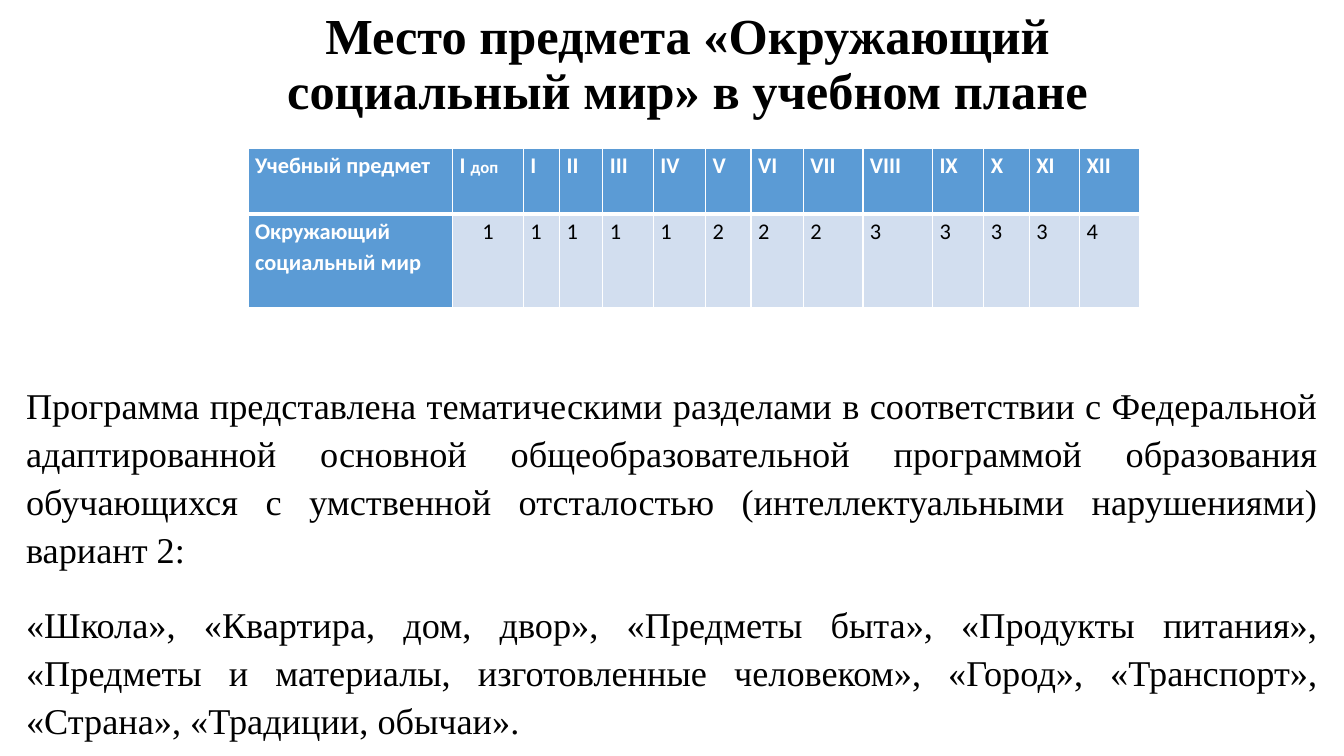
from dataclasses import dataclass

from lxml import etree
from pptx import Presentation
from pptx.dml.color import RGBColor
from pptx.enum.text import MSO_ANCHOR, PP_ALIGN
from pptx.oxml.ns import qn
from pptx.util import Inches, Pt

LEFT, CENTER, JUSTIFY = PP_ALIGN.LEFT, PP_ALIGN.CENTER, PP_ALIGN.JUSTIFY
TOP, BOTTOM = MSO_ANCHOR.TOP, MSO_ANCHOR.BOTTOM


@dataclass(frozen=True)
class Theme:
    serif: str = "Times New Roman"
    sans: str = "Calibri"
    ink: str = "000000"
    white: str = "FFFFFF"
    header_fill: str = "5B9BD5"
    value_fill: str = "D2DEEF"
    title_size: float = 36
    body_size: float = 25.9
    cell_size: float = 16
    small_size: float = 12


def write(para, text, *, font, size, color, bold=False):
    span = para.add_run()
    span.text = text
    span.font.name = font
    span.font.size = Pt(size)
    span.font.bold = bold
    span.font.color.rgb = RGBColor.from_string(color)


def set_border(cell, side, color, width):
    """Draw one cell edge; call before the cell's fill is set, in L, R, T, B order."""
    line = etree.SubElement(cell._tc.get_or_add_tcPr(), qn(f"a:ln{side}"), w=str(Pt(width)))
    fill = etree.SubElement(line, qn("a:solidFill"))
    etree.SubElement(fill, qn("a:srgbClr"), val=color)


class SlideBuilder:
    def __init__(self, page, theme):
        self.page = page
        self.theme = theme

    def text_box(self, paragraphs, left, top, width, height, *, size, bold=False,
                 align=LEFT, anchor=TOP, line_spacing=1.0, gap=0):
        box = self.page.shapes.add_textbox(
            Inches(left), Inches(top), Inches(width), Inches(height))
        frame = box.text_frame
        frame.word_wrap = True
        frame.vertical_anchor = anchor
        for index, text in enumerate(paragraphs):
            para = frame.add_paragraph() if index else frame.paragraphs[0]
            para.alignment = align
            para.line_spacing = line_spacing
            if index:
                para.space_before = Pt(gap)
            write(para, text, font=self.theme.serif, size=size,
                  color=self.theme.ink, bold=bold)

    def cell(self, cell, spans, *, heading, align, edges):
        """Fill a cell with (text, size) spans and (side, width) edges."""
        theme = self.theme
        for side, width in edges:
            set_border(cell, side, theme.white, width)
        cell.fill.solid()
        cell.fill.fore_color.rgb = RGBColor.from_string(
            theme.header_fill if heading else theme.value_fill)
        cell.margin_left = cell.margin_right = Inches(0.07)
        cell.margin_top = cell.margin_bottom = 0
        para = cell.text_frame.paragraphs[0]
        para.alignment = align
        para.line_spacing = 1.15
        for text, size in spans:
            write(para, text, font=theme.sans, size=size, bold=heading,
                  color=theme.white if heading else theme.ink)

    def hours_table(self, rows, left, top, widths, heights):
        """Draw the hours per class; the first row and column are headings."""
        shape = self.page.shapes.add_table(
            len(rows), len(widths), Inches(left), Inches(top),
            Inches(sum(widths)), Inches(sum(heights)))
        table = shape.table
        table.horz_banding = False
        for column, width in zip(table.columns, widths):
            column.width = Inches(width)
        for r, (values, height) in enumerate(zip(rows, heights)):
            table.rows[r].height = Inches(height)
            edges = [("L", 1), ("R", 1), ("T", 3 if r else 1), ("B", 1 if r else 3)]
            for c, value in enumerate(values):
                spans = [(value, self.theme.cell_size)] if isinstance(value, str) else value
                self.cell(table.cell(r, c), spans, heading=r == 0 or c == 0,
                          align=CENTER if r and c == 1 else LEFT, edges=edges)


def main():
    theme = Theme()
    deck = Presentation()
    deck.slide_width, deck.slide_height = Inches(13.33), Inches(7.5)
    builder = SlideBuilder(deck.slides.add_slide(deck.slide_layouts[6]), theme)

    builder.text_box(
        ["Место предмета «Окружающий социальный мир» в учебном плане"],
        2.04, 0, 9.56, 1.24, size=theme.title_size, bold=True,
        align=CENTER, anchor=BOTTOM, line_spacing=0.9)

    builder.text_box(
        ["Программа представлена тематическими разделами в соответствии с Федеральной "
         "адаптированной основной общеобразовательной программой образования обучающихся "
         "с умственной отсталостью (интеллектуальными нарушениями) вариант 2:",
         "«Школа», «Квартира, дом, двор», «Предметы быта», «Продукты питания», «Предметы "
         "и материалы, изготовленные человеком», «Город», «Транспорт», «Страна», "
         "«Традиции, обычаи»."],
        0.16, 3.71, 13.01, 3.71, size=theme.body_size,
        align=JUSTIFY, line_spacing=1.1, gap=20)

    extra_class = [("I ", theme.cell_size), ("доп", theme.small_size)]
    classes = "I II III IV V VI VII VIII IX X XI XII".split()
    hours = "1 1 1 1 1 2 2 2 3 3 3 3 4".split()
    builder.hours_table(
        [["Учебный предмет", extra_class, *classes],
         ["Окружающий социальный мир", *hours]],
        2.46, 1.47,
        [2.03, 0.7, 0.36, 0.43, 0.5, 0.52, 0.45, 0.52, 0.59, 0.69, 0.51, 0.45, 0.5, 0.59],
        [0.65, 0.93])

    deck.save("out.pptx")


if __name__ == "__main__":
    main()
